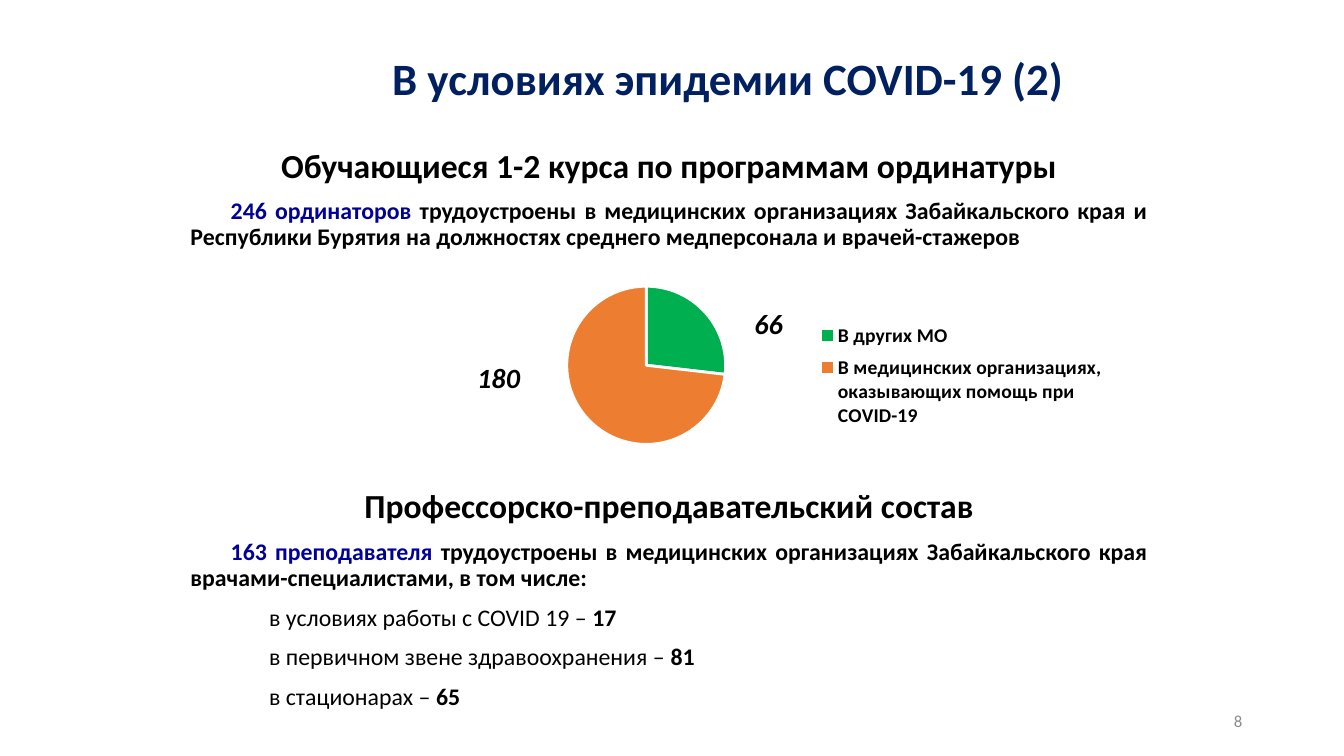
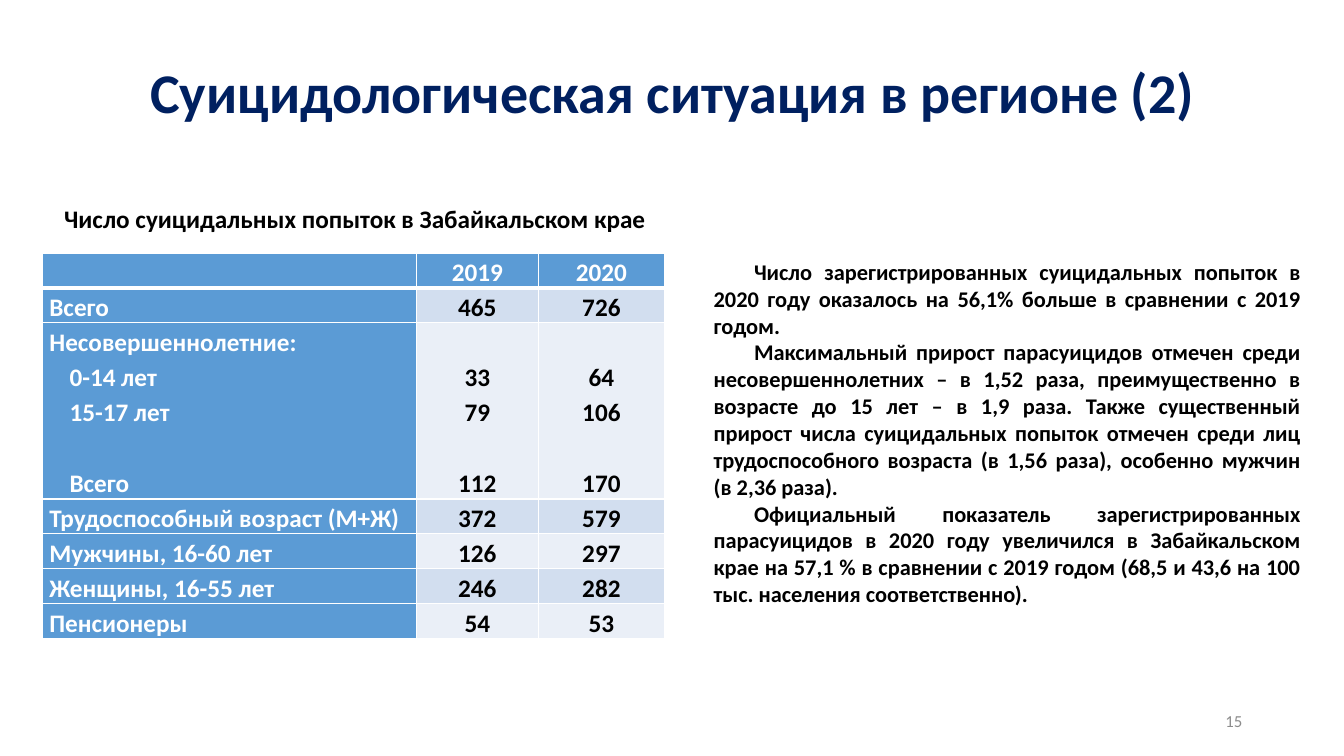
from lxml import etree
from pptx import Presentation
from pptx.chart.data import CategoryChartData
from pptx.dml.color import RGBColor
from pptx.enum.chart import XL_CHART_TYPE as ChartType, XL_LABEL_POSITION as LabelPos
from pptx.enum.chart import XL_LEGEND_POSITION as LegendPos
from pptx.enum.text import MSO_ANCHOR as Anchor, PP_ALIGN as Align
from pptx.oxml import parse_xml
from pptx.oxml.ns import nsdecls, qn
from pptx.util import Pt

PX = 9144  # 100 px to the inch
FONT = "Calibri"
INDENT = 40
COLORS = {
    "title": "002060", "accent": "000099", "text": "000000", "page": "8C8C8C",
    "white": "FFFFFF", "header": "5B9BD5", "band_dark": "D2DEEF", "band_light": "EAEFF7",
    "other": "00B050", "covid": "ED7D31",
}
HEADING = {"alignment": Align.CENTER, "line_spacing": 0.9, "space_before": Pt(10)}
BODY = {**HEADING, "alignment": Align.JUSTIFY}
JUSTIFIED = {"alignment": Align.JUSTIFY}
CENTERED = {"alignment": Align.CENTER}


def px(value):
    return int(value * PX)


def color(name):
    return RGBColor.from_string(COLORS[name])


def apply_format(target, values):
    for name, value in values.items():
        setattr(target, name, value)


def format_font(font, size, ink="text", bold=True, italic=False):
    apply_format(font, {"name": FONT, "size": Pt(size), "bold": bold, "italic": italic})
    font.color.rgb = color(ink)


def write_paragraph(paragraph, runs, style, left=0, first=0):
    """Runs are (text, font options) pairs; indents are px."""
    apply_format(paragraph, style)
    if left or first:
        properties = paragraph._p.get_or_add_pPr()
        properties.set("marL", str(px(left)))
        properties.set("indent", str(px(first)))
    for words, font in runs:
        run = paragraph.add_run()
        run.text = words
        format_font(run.font, **font)


def add_text(slide, box, paragraphs, **frame_format):
    """Each paragraph is (runs, style, left indent, first-line indent)."""
    frame = slide.shapes.add_textbox(*map(px, box)).text_frame
    apply_format(frame, {"word_wrap": True, **frame_format})
    for index, parts in enumerate(paragraphs):
        paragraph = frame.add_paragraph() if index else frame.paragraphs[0]
        write_paragraph(paragraph, *parts)


# Shared title and page number
def start_slide(deck, title, title_box, title_size, page):
    slide = deck.slides.add_slide(deck.slide_layouts[6])
    title_run = (title, {"size": title_size, "ink": "title"})
    add_text(slide, title_box, [([title_run], {**CENTERED, "line_spacing": 0.9})],
             vertical_anchor=Anchor.MIDDLE)
    page_run = (str(page), {"size": 12, "ink": "page", "bold": False})
    add_text(slide, (942, 695, 300, 40), [([page_run], {"alignment": Align.RIGHT})],
             vertical_anchor=Anchor.MIDDLE)
    return slide


# Staff group: heading, summary and detail lines
def add_staff_group(slide, box, heading, count, summary, details=()):
    paragraphs = [
        ([(heading, {"size": 24})], HEADING),
        ([(count, {"size": 17, "ink": "accent"}), (summary, {"size": 17})], BODY, 0, INDENT),
    ]
    for place, number in details:
        runs = [(f"{place} – ", {"size": 17, "bold": False}), (number, {"size": 17})]
        paragraphs.append((runs, BODY, 78, 0))
    add_text(slide, box, paragraphs)


def manual_layout(inner=False, **fractions):
    """Layout from fractions of the chart; w and h are optional."""
    target = '<c:layoutTarget val="inner"/>' if inner else ""
    modes = "" if "w" not in fractions else '<c:xMode val="edge"/><c:yMode val="edge"/>'
    values = "".join(f'<c:{key} val="{value}"/>' for key, value in fractions.items())
    return parse_xml(f'<c:layout {nsdecls("c")}><c:manualLayout>{target}{modes}{values}'
                     f'</c:manualLayout></c:layout>')


def place_part(element, layout, after):
    for old in element.findall(qn("c:layout")):
        element.remove(old)
    anchor = element.find(qn(after)) if after else None
    if anchor is None:
        element.insert(0, layout)
    else:
        anchor.addnext(layout)


# Pie of residents by workplace
def add_workplace_pie(slide, box, workplaces):
    data = CategoryChartData()
    data.categories = [name for name, *_ in workplaces]
    data.add_series("Ординаторы", [count for _, count, *_ in workplaces])
    chart = slide.shapes.add_chart(ChartType.PIE, *map(px, box), data).chart
    apply_format(chart, {"has_title": False, "has_legend": True})
    format_font(chart.font, 10, bold=False)

    legend = chart.legend
    apply_format(legend, {"position": LegendPos.RIGHT, "include_in_layout": False})
    format_font(legend.font, 14)
    place_part(legend._element, manual_layout(x=0.66, y=0.18, w=0.34, h=0.54), "c:legendPos")

    plot = chart.plots[0]
    plot.vary_by_categories = True
    place_part(chart._chartSpace.chart.plotArea,
               manual_layout(inner=True, x=0, y=0.05, w=0.95, h=0.71), None)
    pie = plot.series[0]
    labels = pie.data_labels
    apply_format(labels, {"show_value": True, "position": LabelPos.OUTSIDE_END})
    format_font(labels.font, 20, italic=True)
    leader_lines = labels._element.find(qn("c:showLeaderLines"))
    if leader_lines is None:
        leader_lines = etree.SubElement(labels._element, qn("c:showLeaderLines"))
    leader_lines.set("val", "0")

    for index, (_, _, ink, shift_x, shift_y) in enumerate(workplaces):
        slice_format = pie.points[index].format
        slice_format.fill.solid()
        slice_format.fill.fore_color.rgb = color(ink)
        slice_format.line.color.rgb = color("white")
        slice_format.line.width = Pt(2)
        label = pie.points[index].data_label
        format_font(label.font, 20, italic=True)
        label.position = LabelPos.OUTSIDE_END
        place_part(label._dLbl, manual_layout(x=shift_x, y=shift_y), "c:idx")


def set_borders(cell, widths):
    properties = cell._tc.get_or_add_tcPr()
    for index, (side, width) in enumerate(widths.items()):
        line = parse_xml(f'<a:ln{side} {nsdecls("a")} w="{Pt(width)}"><a:solidFill>'
                         f'<a:srgbClr val="{COLORS["white"]}"/></a:solidFill></a:ln{side}>')
        properties.insert(index, line)


# Table of attempts by age group
def add_attempts_table(slide, box, widths, rows):
    """A cell is a list of (text, left indent, space before) lines."""
    row_height = 34
    table = slide.shapes.add_table(len(rows), len(widths), *map(px, box)).table
    for column, width in zip(table.columns, widths):
        column.width = px(width)
    for r, row in enumerate(rows):
        lines = max(len(cell) for cell in row)
        table.rows[r].height = px(row_height if lines == 1 else 175)
        for c, content in enumerate(row):
            cell = table.cell(r, c)
            label = r == 0 or c == 0
            fill = "header" if label else ("band_dark" if r % 2 else "band_light")
            cell.fill.solid()
            cell.fill.fore_color.rgb = color(fill)
            apply_format(cell, {
                "margin_left": px(7), "margin_right": px(7), "margin_top": 0, "margin_bottom": 0,
                "vertical_anchor": Anchor.MIDDLE if lines == 1 else Anchor.BOTTOM})
            set_borders(cell, {"L": 1, "R": 1, "T": 3 if r == 1 else 1, "B": 1 if r else 3})
            frame = cell.text_frame
            for index, (words, left, before) in enumerate(content):
                paragraph = frame.add_paragraph() if index else frame.paragraphs[0]
                style = {"alignment": Align.CENTER if c else Align.LEFT,
                         "line_spacing": 1.15, "space_before": Pt(before)}
                font = {"size": 18, "ink": "white" if label else "text"}
                write_paragraph(paragraph, [(words, font)], style, left)


def build_staff_slide(deck):
    slide = start_slide(deck, "В условиях эпидемии COVID-19 (2)", (335, 26, 774, 109), 32, 8)
    add_staff_group(
        slide, (179, 143, 969, 115), "Обучающиеся 1-2 курса по программам ординатуры",
        "246 ординаторов", " трудоустроены в медицинских организациях Забайкальского края "
        "и Республики Бурятия на должностях среднего медперсонала и врачей-стажеров")
    add_workplace_pie(slide, (222, 272, 882, 222), [
        ("В других МО", 66, "other", 0.05, 0.15),
        ("В медицинских организациях, оказывающих помощь при COVID-19", 180, "covid",
         -0.07, -0.27),
    ])
    add_staff_group(
        slide, (179, 481, 969, 240), "Профессорско-преподавательский состав",
        "163 преподавателя ", "трудоустроены в медицинских организациях Забайкальского края "
        "врачами-специалистами, в том числе:",
        [("в условиях работы с COVID 19", "17"),
         ("в первичном звене здравоохранения", "81"),
         ("в стационарах", "65")])


def build_attempts_slide(deck):
    slide = start_slide(deck, "Суицидологическая ситуация в регионе (2)",
                        (92, 40, 1150, 110), 40, 15)
    caption = ("Число суицидальных попыток в Забайкальском крае", {"size": 18})
    add_text(slide, (51, 197, 602, 40), [([caption], CENTERED)], word_wrap=False)

    findings = [
        "Число зарегистрированных суицидальных попыток в 2020 году оказалось на 56,1% больше "
        "в сравнении с 2019 годом.",
        "Максимальный прирост парасуицидов отмечен среди несовершеннолетних – в 1,52 раза, "
        "преимущественно в возрасте до 15 лет – в 1,9 раза. Также существенный прирост числа "
        "суицидальных попыток отмечен среди лиц трудоспособного возраста (в 1,56 раза), "
        "особенно мужчин (в 2,36 раза).",
        "Официальный показатель зарегистрированных парасуицидов в 2020 году увеличился "
        "в Забайкальском крае на 57,1 % в сравнении с 2019 годом (68,5 и 43,6 на 100 тыс. "
        "населения соответственно).",
    ]
    add_text(slide, (698, 251, 602, 360),
             [([(finding, {"size": 16})], JUSTIFIED, 0, INDENT) for finding in findings])

    def single(*words):
        return [[(word, 0, 0)] for word in words]

    line_gap = 25  # one line of the table, in points
    minors = [
        [("Несовершеннолетние:", 0, 0), ("0-14 лет", 20, 0), ("15-17 лет", 20, 0),
         ("Всего", 20, line_gap)],
        *([(young, 0, 0), (teen, 0, 0), (total, 0, line_gap)]
          for young, teen, total in [("33", "79", "112"), ("64", "106", "170")]),
    ]
    add_attempts_table(slide, (42, 251, 617, 379), (371, 121, 125), [
        [[], *single("2019", "2020")],
        single("Всего", "465", "726"),
        minors,
        single("Трудоспособный возраст (М+Ж)", "372", "579"),
        single("Мужчины, 16-60 лет", "126", "297"),
        single("Женщины, 16-55 лет", "246", "282"),
        single("Пенсионеры", "54", "53"),
    ])


def main():
    deck = Presentation()
    apply_format(deck, {"slide_width": px(1333), "slide_height": px(750)})
    build_staff_slide(deck)
    build_attempts_slide(deck)
    deck.save("out.pptx")


if __name__ == "__main__":
    main()
